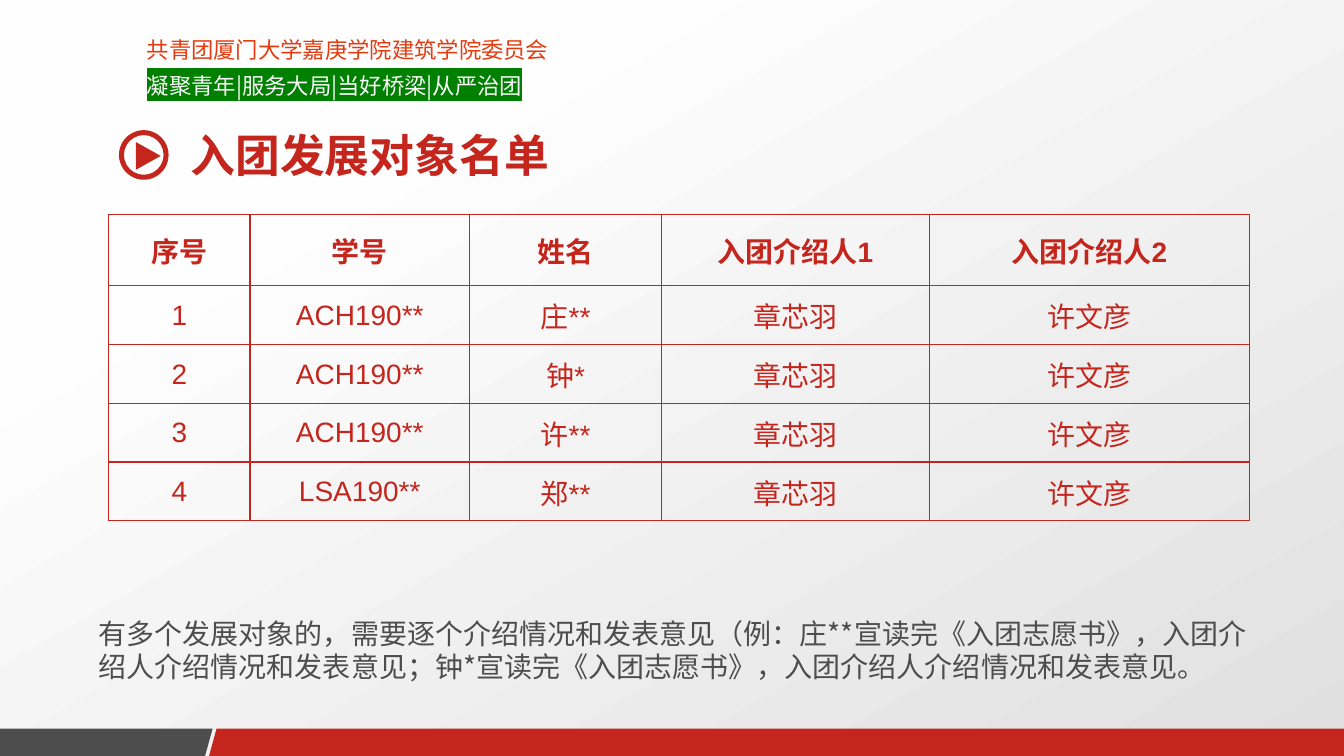
from lxml.etree import SubElement
from pptx import Presentation
from pptx.dml.color import RGBColor
from pptx.enum.shapes import MSO_SHAPE as Preset
from pptx.enum.text import MSO_ANCHOR as Anchor, MSO_AUTO_SIZE as AutoSize, PP_ALIGN as Align
from pptx.oxml.ns import qn
from pptx.util import Cm, Pt

RED = RGBColor(0xC4, 0x26, 0x1D)
ORANGE = RGBColor(0xE4, 0x3C, 0x11)
GRAY = RGBColor(0x4D, 0x4D, 0x4D)
GREEN = RGBColor(0x00, 0x80, 0x00)
PALE = RGBColor(0xF8, 0xF8, 0xF8)
LIGHT = RGBColor(0xFE, 0xFE, 0xFE)
SHADE = RGBColor(0xE0, 0xE0, 0xE0)
CJK = "Noto Sans CJK SC"

HEADERS = ["序号", "学号", "姓名", "入团介绍人1", "入团介绍人2"]
CANDIDATES = [("ACH190**", "庄**"), ("ACH190**", "钟*"), ("ACH190**", "许**"), ("LSA190**", "郑**")]
INTRODUCERS = ("章芯羽", "许文彦")
COLUMN_WIDTHS = [3.56, 5.54, 4.83, 6.76, 8.06]


def style(para, size, color, bold=False, name=CJK, align=Align.LEFT):
    para.alignment = align
    font = para.font
    font.size, font.bold, font.name = Pt(size), bold, name
    font.color.rgb = color
    defaults = para._p.pPr.find(qn("a:defRPr"))
    SubElement(defaults, qn("a:ea"), typeface=CJK)


def paint(shape, color):
    shape.shadow.inherit = False
    shape.fill.solid()
    shape.fill.fore_color.rgb = color
    shape.line.fill.background()


def add_outline(page, points, color):
    corners = [(Cm(x), Cm(y)) for x, y in points]
    builder = page.shapes.build_freeform(*corners[0])
    builder.add_line_segments(corners[1:])
    paint(builder.convert_to_shape(), color)


def add_text_box(page, left, top, width, height):
    box = page.shapes.add_textbox(Cm(left), Cm(top), Cm(width), Cm(height))
    box.text_frame.word_wrap = True
    return box.text_frame


def add_background(page):
    fill = page.background.fill
    fill.gradient()
    fill.gradient_angle = 300
    for stop, position, color in zip(fill.gradient_stops, (0.23, 1), (LIGHT, SHADE)):
        stop.position = position
        stop.color.rgb = color


def add_banner(page, left, top, width, height):
    frame = add_text_box(page, left, top, width, height)
    committee, motto = frame.paragraphs[0], frame.add_paragraph()
    committee.text = "共青团厦门大学嘉庚学院建筑学院委员会"
    span = motto.add_run()
    span.text = "凝聚青年|服务大局|当好桥梁|从严治团"
    highlight = SubElement(span._r.get_or_add_rPr(), qn("a:highlight"))
    SubElement(highlight, qn("a:srgbClr"), val=str(GREEN))
    for para, color in ((committee, ORANGE), (motto, PALE)):
        para.line_spacing, para.space_after = Pt(19.6), Pt(6)
        style(para, 16, color, align=Align.JUSTIFY)


def add_heading(page, left, top, width, height):
    title = page.shapes.title
    title.left, title.top, title.width, title.height = map(Cm, (left, top, width, height))
    frame = title.text_frame
    frame.text = "入团发展对象名单"
    frame.auto_size = AutoSize.NONE
    frame.vertical_anchor = Anchor.MIDDLE
    style(frame.paragraphs[0], 32, RED, bold=True)


def add_play_icon(page, left, top, size):
    ring = page.shapes.add_shape(Preset.DONUT, Cm(left), Cm(top), Cm(size), Cm(size))
    ring.adjustments[0] = 0.1
    paint(ring, RED)
    corners = ((0.34, 0.24), (0.84, 0.52), (0.34, 0.8))
    add_outline(page, [(left + x * size, top + y * size) for x, y in corners], RED)


def add_borders(cell):
    properties = cell._tc.get_or_add_tcPr()
    for index, side in enumerate(("lnL", "lnR", "lnT", "lnB")):
        line = properties.makeelement(qn(f"a:{side}"), {"w": str(Pt(1))})
        fill = SubElement(line, qn("a:solidFill"))
        SubElement(fill, qn("a:srgbClr"), val=str(RED))
        properties.insert(index, line)


def add_candidate_table(page, left, top, header_height, row_height):
    rows = [HEADERS]
    for number, candidate in enumerate(CANDIDATES, 1):
        rows.append([str(number), *candidate, *INTRODUCERS])
    height = header_height + row_height * len(CANDIDATES)
    table = page.shapes.add_table(len(rows), len(HEADERS), Cm(left), Cm(top),
                                  Cm(sum(COLUMN_WIDTHS)), Cm(height)).table
    table.first_row = table.horz_banding = False
    for column, width in zip(table.columns, COLUMN_WIDTHS):
        column.width = Cm(width)
    for r, values in enumerate(rows):
        table.rows[r].height = Cm(row_height if r else header_height)
        for c, value in enumerate(values):
            cell = table.cell(r, c)
            cell.text = value
            cell.vertical_anchor = Anchor.MIDDLE
            cell.margin_left = cell.margin_right = cell.margin_top = Cm(0.03)
            cell.margin_bottom = 0
            cell.fill.background()
            add_borders(cell)
            style(cell.text_frame.paragraphs[0], 20, RED, r == 0, "Arial", Align.CENTER)


def add_note(page, left, top, width, height):
    para = add_text_box(page, left, top, width, height).paragraphs[0]
    para.text = ("有多个发展对象的，需要逐个介绍情况和发表意见（例：庄**宣读完《入团志愿书》，"
                 "入团介绍人介绍情况和发表意见；钟*宣读完《入团志愿书》，入团介绍人介绍情况和发表意见。")
    para.line_spacing = Pt(23.6)
    style(para, 20, GRAY)


def add_footer(page, top, width, height):
    bottom, split, gap, slant = top + height, 5.36, 0.1, 0.19
    add_outline(page, [(0, top), (split, top), (split - slant, bottom), (0, bottom)], GRAY)
    start = split + gap
    add_outline(page, [(start, top), (width, top), (width, bottom), (start - slant, bottom)], RED)


def main():
    deck = Presentation()
    deck.slide_width, deck.slide_height = Cm(33.88), Cm(19.05)
    page = deck.slides.add_slide(deck.slide_layouts[5])
    add_background(page)
    add_banner(page, 3.45, 0.77, 15.19, 1.83)
    add_footer(page, 18.36, 33.88, 0.69)
    add_candidate_table(page, 2.74, 5.4, 1.8, 1.48)
    add_heading(page, 4.55, 3.08, 26.21, 1.63)
    add_play_icon(page, 3, 3.28, 1.25)
    add_note(page, 2.24, 15.42, 29.67, 1.96)
    deck.save("out.pptx")


if __name__ == "__main__":
    main()
